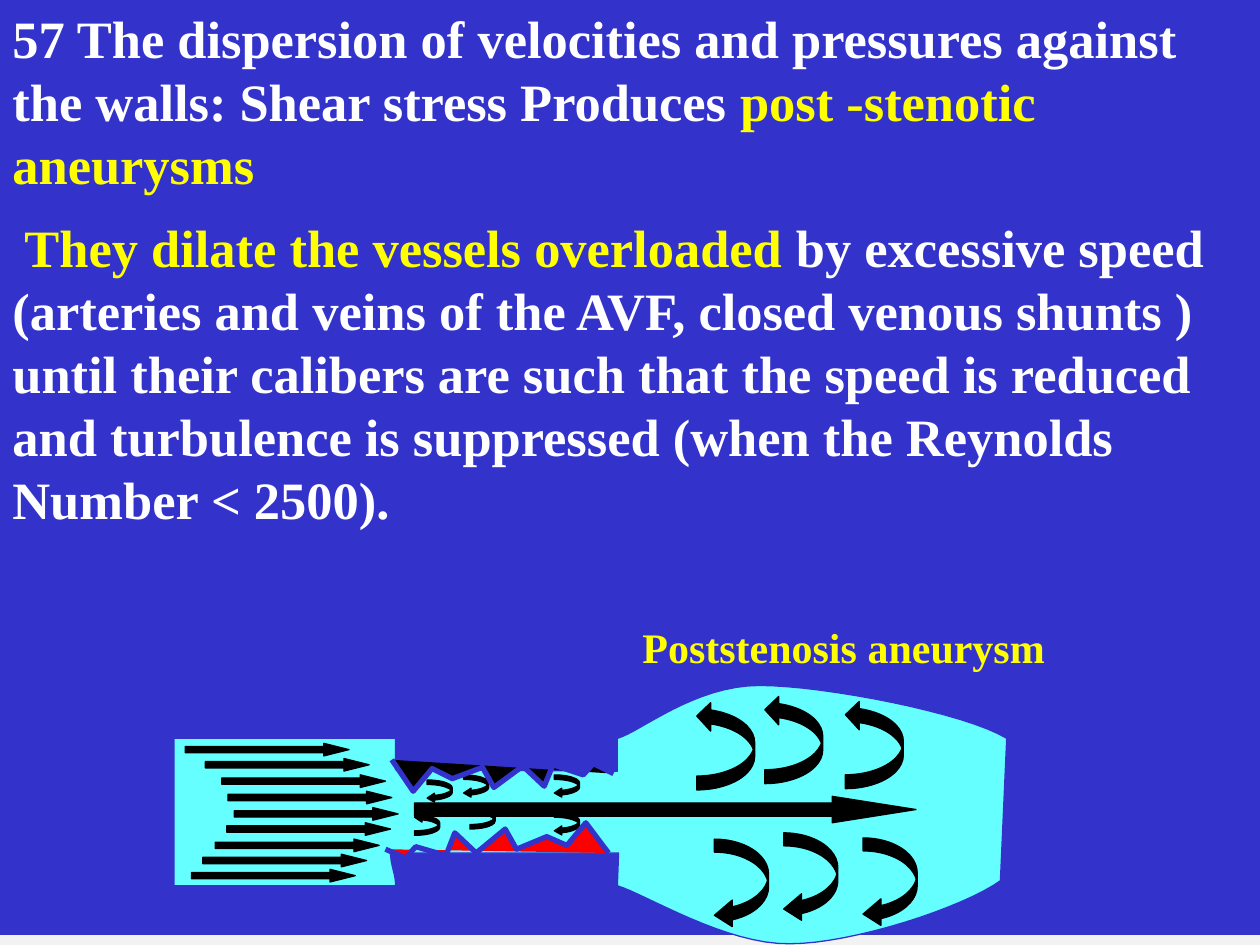
from dataclasses import dataclass

from pptx import Presentation
from pptx.dml.color import RGBColor
from pptx.enum.shapes import MSO_SHAPE
from pptx.enum.text import MSO_ANCHOR, PP_ALIGN
from pptx.util import Inches, Pt

RECT = MSO_SHAPE.RECTANGLE
ARROW = MSO_SHAPE.RIGHT_ARROW
CURL = MSO_SHAPE.CURVED_LEFT_ARROW
LEFT = PP_ALIGN.LEFT
TOP = MSO_ANCHOR.TOP

# Grid of 100 columns by 75 rows
WIDE, HIGH = Inches(10), Inches(7.5)
COL, ROW = WIDE / 100, HIGH / 75


@dataclass(frozen=True)
class Theme:
    page: str = "F2F2F2"
    blue: str = "3333CC"
    cyan: str = "66FFFF"
    red: str = "FF0000"
    black: str = "000000"
    white: str = "FFFFFF"
    gold: str = "FFFF00"
    font: str = "Times New Roman"
    body: int = 30
    label: int = 24
    thin: float = 0.75
    thick: float = 3


@dataclass(frozen=True)
class Mark:
    """A preset arrow placed on the grid."""
    kind: int
    col: float
    row: float
    cols: float
    rows: float
    adj: tuple
    flip: bool = False


@dataclass(frozen=True)
class Run:
    text: str
    color: str


LOOK = Theme()
Point = tuple[float, float]


def place(col: float, row: float) -> tuple[int, int]:
    return round(col * COL), round(row * ROW)


def paint(shape, fill: str, line: str | None, width: float = LOOK.thin) -> None:
    shape.shadow.inherit = False
    shape.fill.solid()
    shape.fill.fore_color.rgb = RGBColor.from_string(fill)
    if line is None:
        shape.line.fill.background()
    else:
        shape.line.color.rgb = RGBColor.from_string(line)
        shape.line.width = Pt(width)


def draw_mark(shapes, mark: Mark) -> None:
    shape = shapes.add_shape(mark.kind, *place(mark.col, mark.row),
                             *place(mark.cols, mark.rows))
    for i, value in enumerate(mark.adj):
        shape.adjustments[i] = value
    if mark.flip:
        shape.element.spPr.xfrm.set("flipV", "1")
    paint(shape, LOOK.black, LOOK.black)


def draw_path(shapes, points: list[Point], fill: str, width: float,
              close: bool) -> None:
    pen = shapes.build_freeform(*place(*points[0]))
    pen.add_line_segments([place(*p) for p in points[1:]], close=close)
    paint(pen.convert_to_shape(), fill, LOOK.blue, width)


def curve(a: Point, b: Point, c: Point, d: Point, steps: int = 16) -> list[Point]:
    """Points along a cubic curve, without its start."""
    out = []
    for i in range(1, steps + 1):
        t = i / steps
        u = 1 - t
        out.append(tuple(u**3 * p + 3 * u * u * t * q + 3 * u * t * t * r + t**3 * s
                         for p, q, r, s in zip(a, b, c, d)))
    return out


def write(shape, paras: list[list[Run]], size: int, frame: dict, form: dict,
          gap: float = 0) -> None:
    text = shape.text_frame
    for key, value in frame.items():
        setattr(text, key, value)
    for i, runs in enumerate(paras):
        para = text.add_paragraph() if i else text.paragraphs[0]
        for key, value in form.items():
            setattr(para, key, value)
        para.space_before = Pt(gap if i else 0)
        for item in runs:
            run = para.add_run()
            run.text = item.text
            style = {"name": LOOK.font, "size": Pt(size), "bold": True}
            for key, value in style.items():
                setattr(run.font, key, value)
            run.font.color.rgb = RGBColor.from_string(item.color)


BODY = [
    [Run("57 The dispersion of velocities and pressures against the walls: "
         "Shear stress Produces ", LOOK.white),
     Run("post -stenotic aneurysms", LOOK.gold)],
    [Run(" They dilate the vessels overloaded ", LOOK.gold),
     Run("by excessive speed (arteries and veins of the AVF, closed venous "
         "shunts ) until their calibers are such that the speed is reduced and "
         "turbulence is suppressed (when the Reynolds Number < 2500).",
         LOOK.white)],
]

# Vessel outline: inlet, narrow neck, bulge
VESSEL = [
    (13.8, 70.3), (13.8, 58.6), (31.4, 58.6), (31.4, 61.1), (49, 61.2), (49, 58.6),
    *curve((49, 58.6), (50.8, 58.1), (55.1, 54.4), (60.3, 54.4)),
    *curve((60.3, 54.4), (65.4, 54.4), (76.7, 56.6), (79.9, 58.6)),
    (79.4, 69.9),
    *curve((79.4, 69.9), (76.5, 72), (67.7, 74.9), (62.7, 74.9)),
    *curve((62.7, 74.9), (57.6, 75), (51.1, 70.9), (49, 70.3)),
    (49.1, 67.7), (31, 67.7),
    *curve((31, 67.7), (31, 68.7), (31.4, 69.3), (31.4, 70.3)),
]
FLOOR = [(30.6, 67.4), (32.2, 68.1), (33, 67.2), (35.4, 67.9), (36.1, 66.1),
         (37.8, 67.7), (40.1, 65.8), (41, 67.4), (43.4, 66.4), (45, 67.1),
         (46.5, 65.3), (48.3, 67.7)]
ROOF = [(48.7, 61.4), (47.1, 60.6), (46.3, 61.5), (43.9, 60.7), (43.2, 62.4),
        (41.5, 60.8), (39.2, 62.5), (38.3, 60.9), (35.9, 61.8), (34.3, 61),
        (32.8, 62.8), (31.1, 60.3)]

# Arrows
FLOW = [(14.7, 59), (16.3, 60.2), (17.6, 61.5), (18.1, 62.8), (18.6, 64.1),
        (18, 65.3), (17.1, 66.6), (16.1, 67.8), (15.2, 69)]
JET = Mark(ARROW, 32.9, 63.2, 39.8, 2.1, (0.5, 3.17))
RISE = [(55.3, 55.7), (60.7, 55.2), (67.1, 55.6)]
FALL = [(56.7, 66.6), (62.2, 66.1), (68.5, 66.5)]
EDDY = [(33.9, 61.9), (36.8, 61.5), (44, 61.5), (44, 64.5)]
BACK = [(32.9, 64.5), (37.3, 64)]
BIG, SMALL = (0.24, 0.49), (0.2, 0.4, 0.33)

MARKS = [
    *(Mark(CURL, *at, 4.6, 7, (*BIG, 0.24), True) for at in RISE),
    *(Mark(CURL, *at, 4.3, 7.1, (*BIG, 0.33)) for at in FALL),
    JET,
    *(Mark(CURL, *at, 2, 1.8, SMALL) for at in EDDY),
    *(Mark(ARROW, *at, 13, 1, (0.5, 2)) for at in FLOW),
]


def main() -> None:
    deck = Presentation()
    deck.slide_width, deck.slide_height = WIDE, HIGH
    slide = deck.slides.add_slide(deck.slide_layouts[6])
    slide.background.fill.solid()
    slide.background.fill.fore_color.rgb = RGBColor.from_string(LOOK.page)
    shapes = slide.shapes

    # Blue panel with the main text
    panel = shapes.add_shape(RECT, 0, 0, *place(100, 74.2))
    paint(panel, LOOK.blue, None)
    write(panel, BODY, LOOK.body, {"word_wrap": True, "vertical_anchor": TOP},
          {"alignment": LEFT, "line_spacing": Pt(36)}, gap=11.5)

    # Vessel with its flow
    draw_path(shapes, VESSEL, LOOK.cyan, LOOK.thin, True)
    for mark in MARKS:
        draw_mark(shapes, mark)

    # Rough walls of the neck, then the eddies in front
    for wall, fill in ((FLOOR, LOOK.red), (ROOF, LOOK.black)):
        draw_path(shapes, wall, fill, LOOK.thick, False)
    for at in BACK:
        draw_mark(shapes, Mark(CURL, *at, 2, 1.8, SMALL, True))

    # Label of the bulge
    label = shapes.add_textbox(*place(50, 48.8), *place(37.9, 5))
    write(label, [[Run("Poststenosis aneurysm", LOOK.gold)]], LOOK.label,
          {"word_wrap": True, "vertical_anchor": TOP}, {"alignment": LEFT})

    deck.save("out.pptx")


if __name__ == "__main__":
    main()
